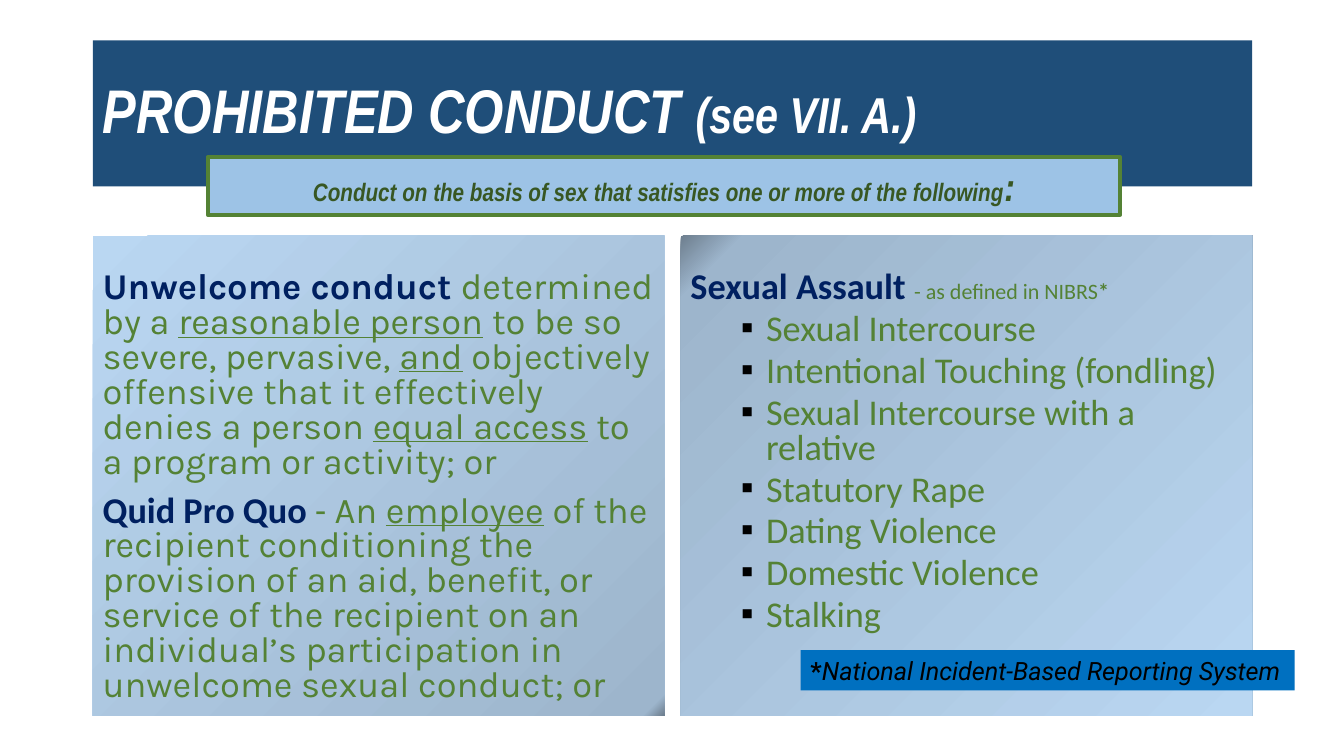
from lxml import etree
from pptx import Presentation, util as u
from pptx.dml.color import RGBColor
from pptx.enum import text as t
from pptx.oxml import parse_xml
from pptx.oxml.ns import nsdecls

NAVY = RGBColor(0x1F, 0x4E, 0x79)
INK = RGBColor(0x00, 0x20, 0x60)
GREEN = RGBColor(0x54, 0x82, 0x35)
MOSS = RGBColor(0x38, 0x57, 0x23)
SKY = RGBColor(0x9D, 0xC3, 0xE6)
BLUE = RGBColor(0x00, 0x70, 0xC0)
WHITE = RGBColor(0xFF, 0xFF, 0xFF)
BLACK = RGBColor(0x00, 0x00, 0x00)
DARK, MID, PALE = "6E7F8F", "9DB5CC", "BAD7F2"

WIDE, HIGH = 13.33, 7.5
LEFT, GAP = 0.92, 0.16
FULL = 11.5
HALF = (FULL - GAP) / 2
TOP, TALL = 2.34, 4.76
BODY = 25.9

deck = Presentation()
deck.slide_width, deck.slide_height = u.Inches(WIDE), u.Inches(HIGH)
slide = deck.slides.add_slide(deck.slide_layouts[5])


def write(par, words, size=BODY, face="Calibri", color=GREEN,
          bold=False, slant=False, under=False):
    run = par.add_run()
    run.text = words
    font = run.font
    font.size, font.name, font.color.rgb = u.Pt(size), face, color
    font.bold, font.italic, font.underline = bold, slant, under


def box(left, top, width, height, fill=None):
    """Add a wrapping text box and return it with its first paragraph."""
    shape = slide.shapes.add_textbox(*map(u.Inches, (left, top, width, height)))
    shape.text_frame.word_wrap = True
    if fill is not None:
        shape.fill.solid()
        shape.fill.fore_color.rgb = fill
    return shape, shape.text_frame.paragraphs[0]


# Title band
title = slide.shapes.title
title.left, title.top = u.Inches(LEFT), u.Inches(0.4)
title.width, title.height = u.Inches(FULL), u.Inches(1.45)
title.fill.solid()
title.fill.fore_color.rgb = NAVY
frame = title.text_frame
frame.word_wrap = True
frame.auto_size = t.MSO_AUTO_SIZE.NONE
frame.vertical_anchor = t.MSO_ANCHOR.MIDDLE
head = frame.paragraphs[0]
head.alignment, head.line_spacing = t.PP_ALIGN.LEFT, 0.9
for words, size in (("PROHIBITED CONDUCT ", 44), ("(see VII. A.)", 36)):
    write(head, words, size, "Arial Narrow", WHITE, bold=True, slant=True)

# Two gradient panels
panels = (
    (2, '<a:path path="circle"><a:fillToRect l="100000" t="100000"/></a:path>'),
    (6, '<a:lin ang="2700000" scaled="0"/>'),
)
firsts = []
for col, (share, shade) in enumerate(panels):
    panel, first = box(LEFT + col * (HALF + GAP), TOP, HALF, TALL)
    stops = "".join(
        f'<a:gs pos="{pos * 1000}"><a:srgbClr val="{tone}"/></a:gs>'
        for pos, tone in ((0, DARK), (share, MID), (100, PALE)))
    props = panel.element.spPr
    props.replace(props.find("{*}noFill"), parse_xml(
        f'<a:gradFill {nsdecls("a")} rotWithShape="1">'
        f'<a:gsLst>{stops}</a:gsLst>{shade}</a:gradFill>'))
    panel.text_frame.margin_top = u.Inches(0.36)
    first.line_spacing = 0.8
    firsts.append((panel.text_frame, first))

# Left panel
frame, first = firsts[0]
write(first, "Unwelcome conduct ", face="Karla", color=INK, bold=True)
quid = frame.add_paragraph()
quid.line_spacing, quid.space_before = 0.8, u.Pt(10)
write(quid, "Quid Pro Quo ", color=INK, bold=True)
write(quid, "- ")
clauses = (
    (first, ("determined by a ", "reasonable person",
             " to be so severe, pervasive, ", "and",
             " objectively offensive that it effectively denies a person ",
             "equal access", " to a program or activity; or")),
    (quid, ("An ", "employee",
            " of the recipient conditioning the provision of an aid, benefit, "
            "or service of the recipient on an individual’s participation in "
            "unwelcome sexual conduct; or")),
)
for par, parts in clauses:
    for spot, words in enumerate(parts):
        write(par, words, face="Karla", under=spot % 2 == 1)

# Right panel
frame, first = firsts[1]
write(first, "Sexual Assault ", color=INK, bold=True)
write(first, "- as defined in NIBRS", 15.7)
write(first, "*", 15.7, bold=True)
for act in ("Sexual Intercourse", "Intentional Touching (fondling)",
            "Sexual Intercourse with a relative", "Statutory Rape",
            "Dating Violence", "Domestic Violence", "Stalking"):
    par = frame.add_paragraph()
    par.level, par.line_spacing, par.space_before = 1, 0.8, u.Pt(5)
    props = par._p.get_or_add_pPr()
    props.set("marL", str(u.Inches(0.75)))
    props.set("indent", str(u.Inches(-0.25)))
    props.append(parse_xml(
        f'<a:buClr {nsdecls("a")}><a:srgbClr val="{BLACK}"/></a:buClr>'))
    space = etree.QName(props).namespace
    etree.SubElement(props, f"{{{space}}}buFont", typeface="Arial")
    etree.SubElement(props, f"{{{space}}}buChar", char="▪")
    write(par, act)

# Banner across the title's lower edge
banner, line = box(2.06, 1.56, 9.05, 0.57, SKY)
banner.line.color.rgb, banner.line.width = GREEN, u.Pt(3)
line.alignment = t.PP_ALIGN.CENTER
lead = "Conduct on the basis of sex that satisfies one or more of the following"
for words, size in ((lead, 18), (":", 28)):
    write(line, words, size, "Arial Narrow", MOSS, bold=True, slant=True)

# Footnote
note, line = box(7.94, 6.45, 4.9, 0.4, BLUE)
write(line, "*", 18, "Roboto", BLACK, bold=True)
write(line, "National Incident-Based Reporting System", 18, "Roboto", BLACK,
      slant=True)

for shape in (banner, note):
    shape.text_frame.auto_size = t.MSO_AUTO_SIZE.SHAPE_TO_FIT_TEXT

deck.save("out.pptx")
